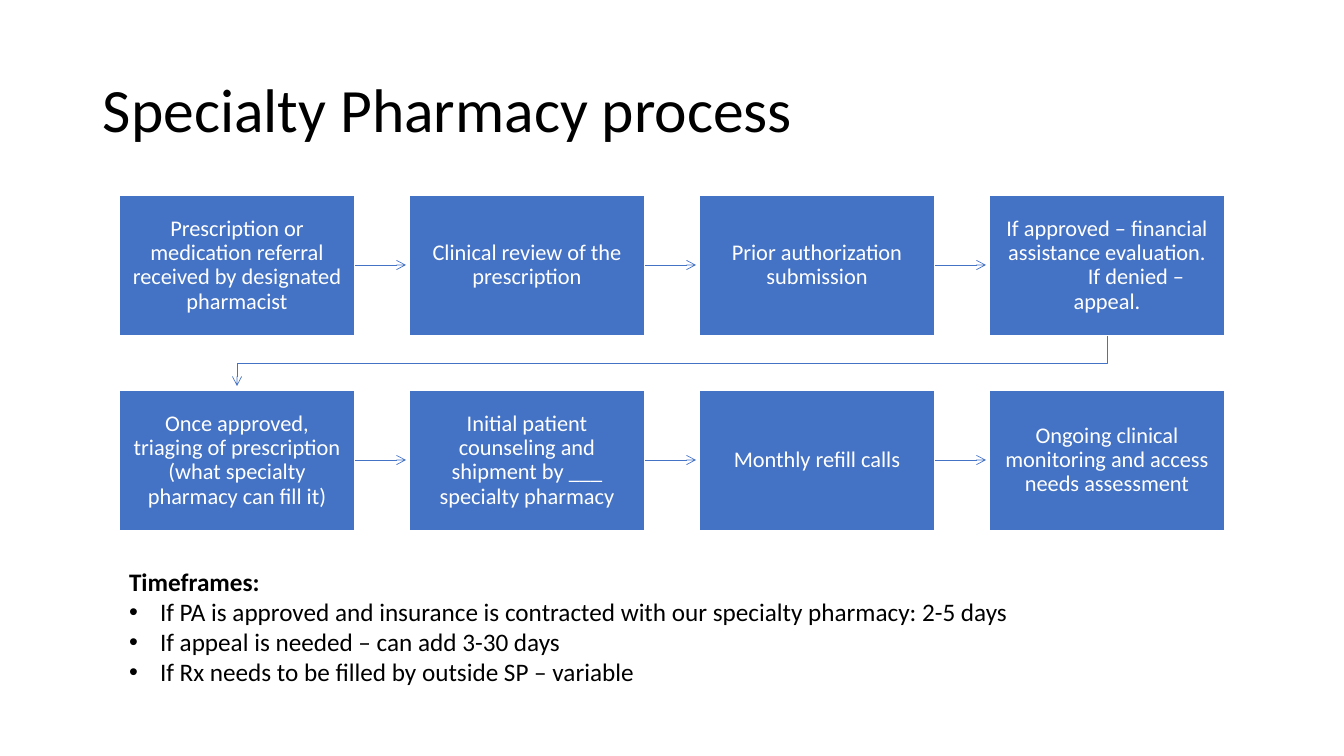
from lxml import etree
from pptx import Presentation
from pptx.dml.color import RGBColor
from pptx.enum.shapes import MSO_CONNECTOR, MSO_SHAPE
from pptx.enum.text import MSO_ANCHOR, PP_ALIGN
from pptx.oxml.ns import qn
from pptx.util import Pt

RECTANGLE = MSO_SHAPE.RECTANGLE
STRAIGHT = MSO_CONNECTOR.STRAIGHT
LEFT, CENTER = PP_ALIGN.LEFT, PP_ALIGN.CENTER
TOP, MIDDLE = MSO_ANCHOR.TOP, MSO_ANCHOR.MIDDLE

EMU_PER_PX = 914400 / 100.8
FONT = "Calibri"
BLUE, WHITE, BLACK = "4472C4", "FFFFFF", "000000"

STEP_WIDTH, STEP_HEIGHT = 236, 141
COLUMN_PITCH, ROW_PITCH = 290, 195
ARROW_LENGTH = 51
DENIED_INDENT = 58
BULLET_INDENT = 31

STEP_ROWS = [
    [
        ["Prescription or medication referral received by designated pharmacist"],
        ["Clinical review of the prescription"],
        ["Prior authorization submission"],
        ["If approved – financial assistance evaluation.", "If denied – appeal."],
    ],
    [
        ["Once approved, triaging of prescription (what specialty pharmacy can fill it)"],
        ["Initial patient counseling and shipment by ___ specialty pharmacy"],
        ["Monthly refill calls"],
        ["Ongoing clinical monitoring and access needs assessment"],
    ],
]
TIMEFRAMES = [
    "If PA is approved and insurance is contracted with our specialty pharmacy: 2-5 days",
    "If appeal is needed – can add 3-30 days",
    "If Rx needs to be filled by outside SP – variable",
]


def px(length):
    """Turn a length in px into EMU."""
    return round(length * EMU_PER_PX)


def color(value):
    """Turn a hex string into a colour."""
    return RGBColor.from_string(value)


def set_frame(shape, inset_x=10, inset_y=5, anchor=TOP):
    """Set wrapping, insets and anchor of a shape's text frame and return it."""
    frame = shape.text_frame
    frame.word_wrap = True
    frame.vertical_anchor = anchor
    frame.margin_left = frame.margin_right = px(inset_x)
    frame.margin_top = frame.margin_bottom = px(inset_y)
    return frame


def write(frame, text, size=18, ink=BLACK, bold=False, align=LEFT,
          spacing=1.0, margin=0, indent=0, bullet=None):
    """Write one formatted paragraph at the end of a text frame."""
    paragraph = frame.paragraphs[-1]
    if paragraph.runs:
        paragraph = frame.add_paragraph()
    paragraph.alignment = align
    paragraph.line_spacing = spacing
    run = paragraph.add_run()
    run.text = text
    run.font.name = FONT
    run.font.size = Pt(size)
    run.font.bold = bold
    run.font.color.rgb = color(ink)
    properties = paragraph._p.get_or_add_pPr()
    properties.set("marL", str(px(margin)))
    properties.set("indent", str(px(indent)))
    if bullet:
        etree.SubElement(properties, qn("a:buFont")).set("typeface", "Arial")
        etree.SubElement(properties, qn("a:buChar")).set("char", bullet)


def style_arrow(shape):
    """Give a line its colour, width and open arrowhead, without shadow."""
    shape.line.color.rgb = color(BLUE)
    shape.line.width = Pt(0.5)
    line = shape.line._get_or_add_ln()
    etree.SubElement(line, qn("a:tailEnd")).set("type", "arrow")
    etree.SubElement(shape._element.spPr, qn("a:effectLst"))


def add_title(slide, left, top, width, height):
    """Place the slide title in its box."""
    title = slide.shapes.add_textbox(px(left), px(top), px(width), px(height))
    frame = set_frame(title, anchor=MIDDLE)
    write(frame, "Specialty Pharmacy process", size=44, spacing=0.9)


def add_step(slide, left, top, texts):
    """Place one process step."""
    step = slide.shapes.add_shape(
        RECTANGLE, px(left), px(top), px(STEP_WIDTH), px(STEP_HEIGHT))
    step.shadow.inherit = False
    step.fill.solid()
    step.fill.fore_color.rgb = color(BLUE)
    step.line.color.rgb = color(WHITE)
    step.line.width = Pt(1)
    frame = set_frame(step, inset_x=12, inset_y=12, anchor=MIDDLE)
    for number, text in enumerate(texts):
        write(frame, text, size=16, ink=WHITE, align=CENTER, spacing=0.9,
              indent=DENIED_INDENT * number)


def add_step_arrow(slide, left, middle):
    """Draw the arrow from one step to the next in its row."""
    arrow = slide.shapes.add_connector(
        STRAIGHT, px(left), px(middle), px(left + ARROW_LENGTH), px(middle))
    style_arrow(arrow)


def add_return_arrow(slide, start_x, end_x, top):
    """Draw the bent arrow from the end of one row to the start of the next."""
    turn = top + (ROW_PITCH - STEP_HEIGHT) // 2
    builder = slide.shapes.build_freeform(px(start_x), px(top))
    points = [(start_x, turn), (end_x, turn), (end_x, top + ARROW_LENGTH - 1)]
    builder.add_line_segments([(px(x), px(y)) for x, y in points], close=False)
    arrow = builder.convert_to_shape()
    arrow.fill.background()
    style_arrow(arrow)


def add_process(slide, left, top):
    """Place the rows of steps and the arrows between them."""
    for row, steps in enumerate(STEP_ROWS):
        step_top = top + row * ROW_PITCH
        for column, texts in enumerate(steps):
            step_left = left + column * COLUMN_PITCH
            add_step(slide, step_left, step_top, texts)
            if column < len(steps) - 1:
                add_step_arrow(slide, step_left + STEP_WIDTH,
                               step_top + STEP_HEIGHT // 2)
    first_center = left + STEP_WIDTH // 2
    last_center = first_center + (len(STEP_ROWS[0]) - 1) * COLUMN_PITCH
    add_return_arrow(slide, last_center, first_center, top + STEP_HEIGHT)


def add_timeframes(slide, left, top, width, height):
    """Place the heading and bullets on timeframes."""
    box = slide.shapes.add_textbox(px(left), px(top), px(width), px(height))
    frame = set_frame(box)
    write(frame, "Timeframes:", bold=True)
    for text in TIMEFRAMES:
        write(frame, text, margin=BULLET_INDENT, indent=-BULLET_INDENT, bullet="•")


def main():
    """Build the slide and save it."""
    presentation = Presentation()
    presentation.slide_width = px(1344)
    presentation.slide_height = px(756)
    slide = presentation.slides.add_slide(presentation.slide_layouts[6])
    add_title(slide, 93, 40, 1159, 146)
    add_process(slide, 119, 195)
    add_timeframes(slide, 119, 561, 1039, 163)
    presentation.save("out.pptx")


if __name__ == "__main__":
    main()
